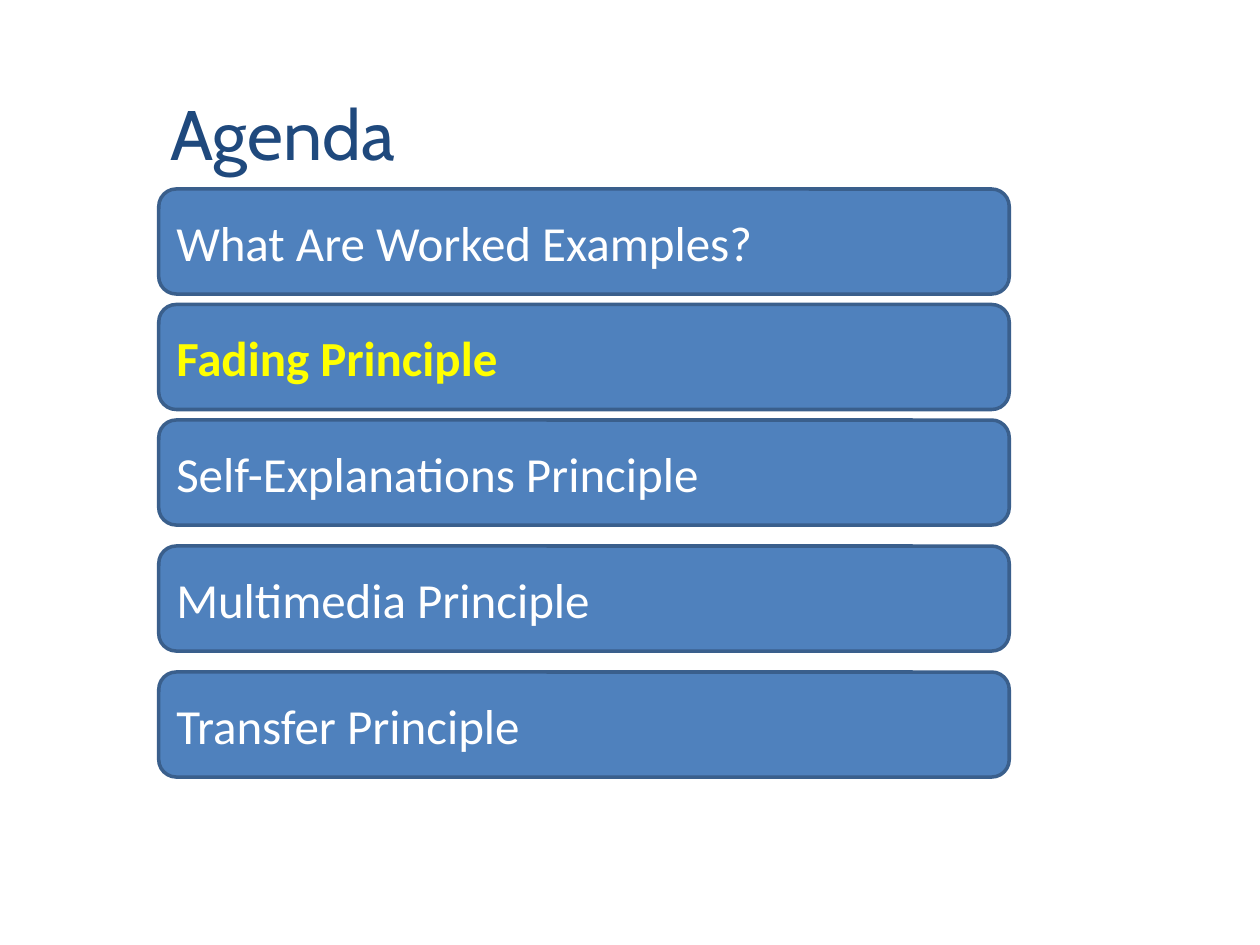
import pptx
import pptx.util
import pptx.dml.color
import pptx.enum.shapes
import pptx.enum.text

RGB = pptx.dml.color.RGBColor
NAVY = RGB(0x1F, 0x49, 0x7D)
BLUE = RGB(0x4F, 0x81, 0xBD)
EDGE = RGB(0x3A, 0x5F, 0x8C)
WHITE = RGB(0xFF, 0xFF, 0xFF)
YELLOW = RGB(0xFF, 0xFF, 0x00)

ROW = pptx.util.Inches(1) // 12  # the grid has twelve rows to the inch
BAR_ROWS = 10
TITLE_ONLY = 5


class Deck:
    """Holds the style and the current slide."""

    def __init__(self):
        self.prs = pptx.Presentation()
        self.prs.slide_width = pptx.util.Inches(10)
        self.prs.slide_height = pptx.util.Inches(7.5)
        self.slide = self.prs.slides.add_slide(self.prs.slide_layouts[TITLE_ONLY])

    def label(self, frame, text, font, size, color, bold=False):
        frame.text = text
        par = frame.paragraphs[0]
        par.alignment = pptx.enum.text.PP_ALIGN.LEFT
        par.font.name = font
        par.font.size = pptx.util.Pt(size)
        par.font.color.rgb = color
        par.font.bold = bold

    def title(self, text, left, top, width, height):
        box = self.slide.shapes.title
        box.left, box.top = pptx.util.Inches(left), pptx.util.Inches(top)
        box.width, box.height = pptx.util.Inches(width), pptx.util.Inches(height)
        frame = box.text_frame
        frame.word_wrap = False
        frame.auto_size = pptx.enum.text.MSO_AUTO_SIZE.SHAPE_TO_FIT_TEXT
        frame.vertical_anchor = pptx.enum.text.MSO_ANCHOR.TOP
        self.label(frame, text, "Cabin", 40, NAVY)

    def bar(self, text, row, active):
        box = self.slide.shapes.add_shape(
            pptx.enum.shapes.MSO_SHAPE.ROUNDED_RECTANGLE,
            pptx.util.Inches(1.26), row * ROW,
            pptx.util.Inches(6.75), BAR_ROWS * ROW)
        box.shadow.inherit = False
        box.fill.solid()
        box.fill.fore_color.rgb = BLUE
        box.line.color.rgb = EDGE
        box.line.width = pptx.util.Pt(2)
        box.text_frame.vertical_anchor = pptx.enum.text.MSO_ANCHOR.MIDDLE
        color = YELLOW if active else WHITE
        self.label(box.text_frame, text, "Calibri", 28, color, active)


def main():
    deck = Deck()

    # Heading
    deck.title("Agenda", 1.25, 0.67, 2.03, 0.77)

    # Agenda items, each with the gap in rows below it
    items = [
        ("What Are Worked Examples?", 1),
        ("Fading Principle", 1),
        ("Self-Explanations Principle", 2),
        ("Multimedia Principle", 2),
        ("Transfer Principle", 0),
    ]
    row = 18
    for text, gap in items:
        deck.bar(text, row, active=text == "Fading Principle")
        row += BAR_ROWS + gap

    deck.prs.save("out.pptx")


if __name__ == "__main__":
    main()
